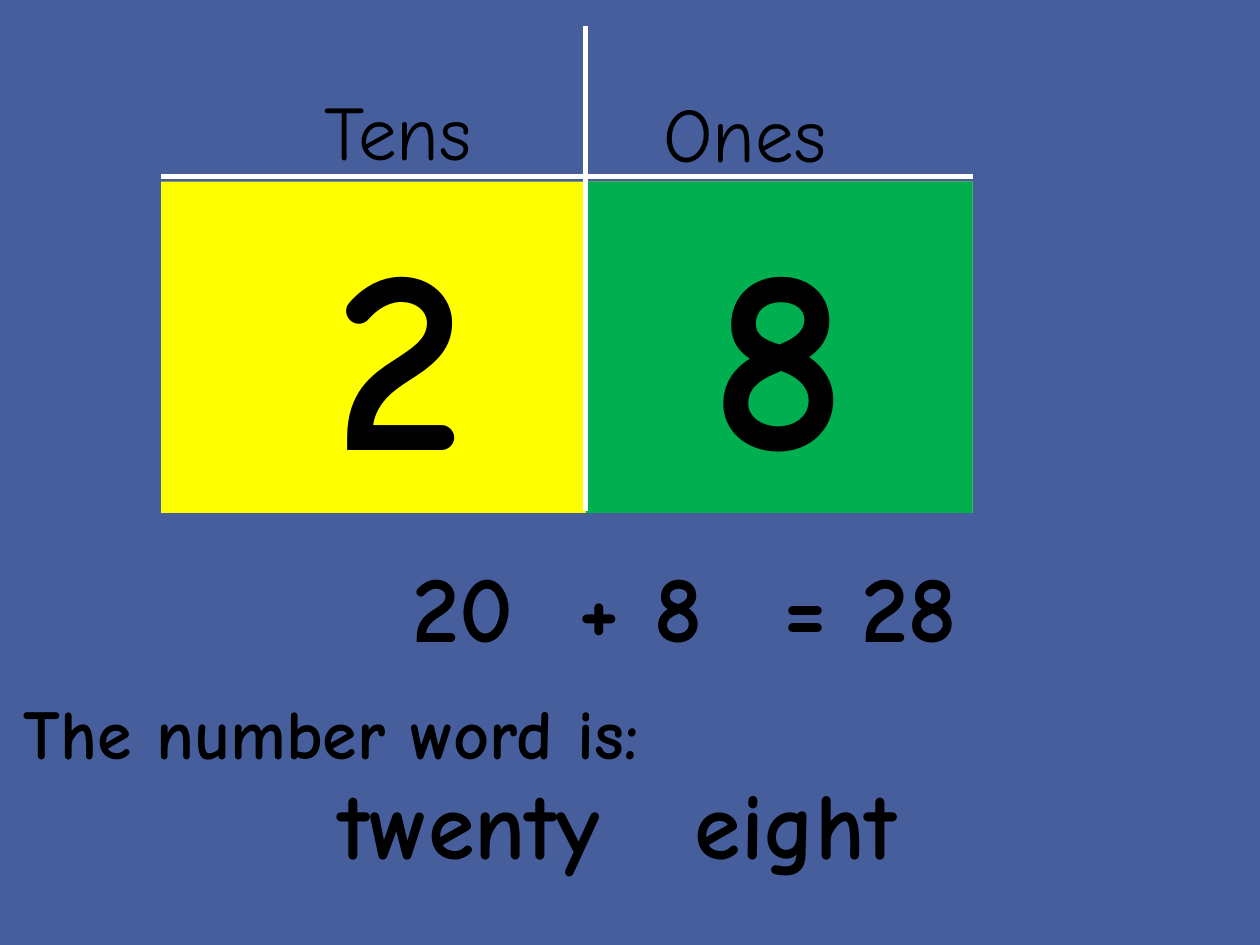
from lxml.etree import SubElement
from pptx import Presentation
from pptx.dml.color import RGBColor
from pptx.enum.shapes import MSO_CONNECTOR, MSO_SHAPE
from pptx.enum.text import MSO_ANCHOR, PP_ALIGN
from pptx.oxml.ns import qn
from pptx.util import Cm, Pt

FONT = "Comic Neue"
HUES = {"back": "465E9C", "tens": "FFFF00", "ones": "00B050",
        "ink": "000000", "rule": "FFFFFF"}

LEFT, MID, RIGHT = 3.25, 11.81, 19.61
TOP, HIGH = 3.66, 6.68
SUM_Y, WORD_Y, ROW = 10.92, 15.29, 2.57

HEADS = [("Tens", 5.51, 1.02), ("Ones", 12.5, 1.07)]
DIGITS = [("2", "tens", LEFT, 7.0), ("8", "ones", MID, 0.25)]
TEXTS = [
    ("20", 7.24, SUM_Y, 4.19),
    ("+ 8", 10.82, SUM_Y, 4.19),
    ("= 28", 14.43, SUM_Y, 6.22),
    ("twenty", 4.24, WORD_Y, 10.44),
    ("eight", 10.82, WORD_Y, 10.44),
]
LABEL = ("The number word is:", 0.23, 13.77, 14.76, 1.96)
RULES = [(RIGHT, 3.56, LEFT, 3.56), (MID, 0.53, MID, 10.31)]


def hue(name):
    return RGBColor.from_string(HUES[name])


def write(shape, text, size, bold=True, align=PP_ALIGN.CENTER,
          anchor=MSO_ANCHOR.TOP):
    frame = shape.text_frame
    frame.word_wrap = True
    frame.vertical_anchor = anchor
    para = frame.paragraphs[0]
    para.text = text
    para.alignment = align
    para.font.name = FONT
    para.font.size = Pt(size)
    para.font.bold = bold
    para.font.color.rgb = hue("ink")


def box(x, y, w, h):
    return slide.shapes.add_textbox(Cm(x), Cm(y), Cm(w), Cm(h))


def card(text, name, x, inset):
    shape = slide.shapes.add_shape(
        MSO_SHAPE.RECTANGLE, Cm(x), Cm(TOP), Cm(RIGHT - x), Cm(HIGH))
    shape.shadow.inherit = False
    shape.fill.solid()
    shape.fill.fore_color.rgb = hue(name)
    shape.line.fill.background()
    shape.text_frame.margin_right = Cm(inset)
    write(shape, text, 150)


def rule(*ends):
    line = slide.shapes.add_connector(
        MSO_CONNECTOR.STRAIGHT, *[Cm(end) for end in ends])
    line.line.color.rgb = hue("rule")
    line.line.width = Pt(3)
    SubElement(line._element.spPr, qn("a:effectLst"))


deck = Presentation()
deck.slide_width, deck.slide_height = Cm(25.4), Cm(19.05)
slide = deck.slides.add_slide(deck.slide_layouts[6])
slide.background.fill.solid()
slide.background.fill.fore_color.rgb = hue("back")

for text, x, y in HEADS:
    write(box(x, y, 5.03, 3.18), text, 44, bold=False,
          anchor=MSO_ANCHOR.MIDDLE)
rule(*RULES[0])
for digit in DIGITS:
    card(*digit)
for text, x, y, w in TEXTS:
    write(box(x, y, w, ROW), text, 54)
write(box(*LABEL[1:]), LABEL[0], 40, align=PP_ALIGN.LEFT)
rule(*RULES[1])

deck.save("out.pptx")
